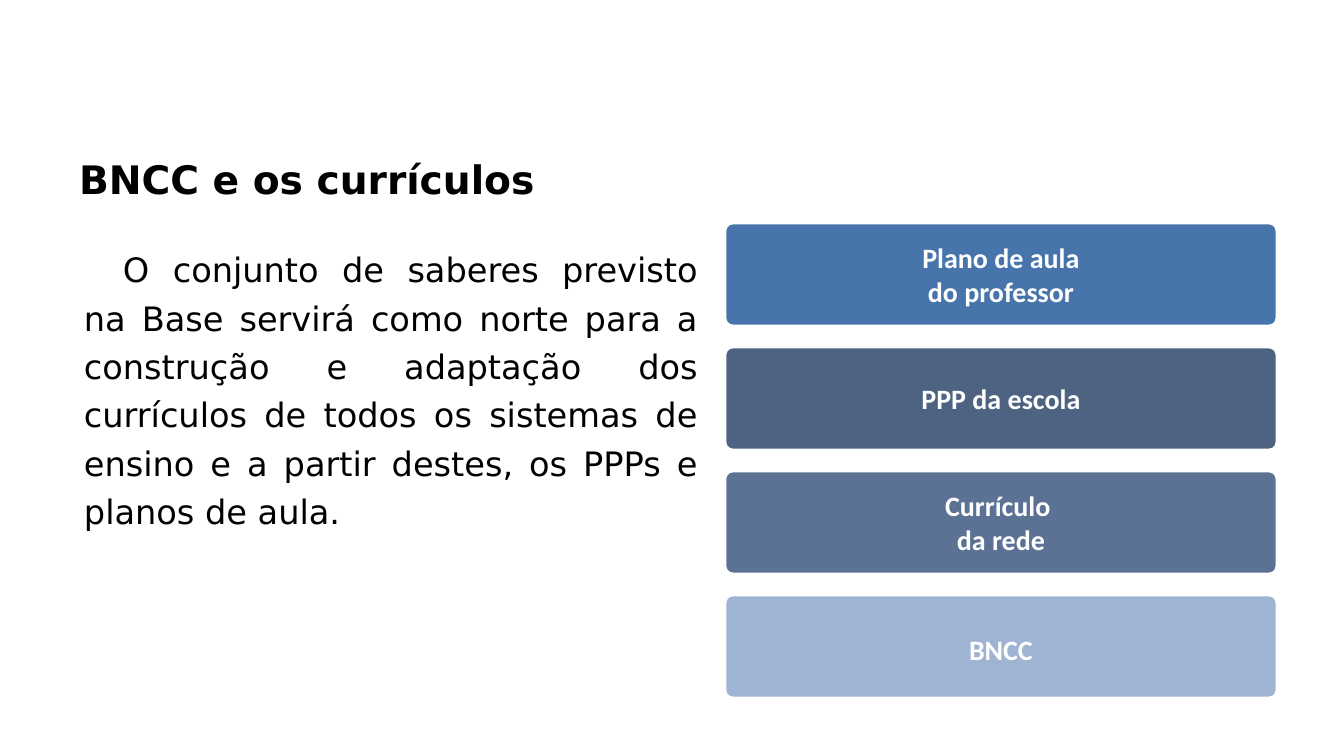
from dataclasses import dataclass

from pptx import Presentation
from pptx.dml.color import RGBColor
from pptx.enum.shapes import MSO_SHAPE
from pptx.enum.text import MSO_ANCHOR, MSO_AUTO_SIZE, PP_ALIGN
from pptx.util import Pt

ROUNDED = MSO_SHAPE.ROUNDED_RECTANGLE
TOP, MIDDLE = MSO_ANCHOR.TOP, MSO_ANCHOR.MIDDLE
LEFT, CENTER, JUSTIFY = PP_ALIGN.LEFT, PP_ALIGN.CENTER, PP_ALIGN.JUSTIFY
TITLE_ONLY = 5

# Content
TITLE = "BNCC e os currículos"
BODY = (
    "O conjunto de saberes previsto na Base servirá como norte para a "
    "construção e adaptação dos currículos de todos os sistemas de ensino "
    "e a partir destes, os PPPs e planos de aula."
)
# Level text (\v is a line break), fill, extra top inset in px
LEVELS = [
    ("Plano de aula\vdo professor", "4775AB", 0),
    ("PPP da escola", "4D6381", 0),
    ("Currículo \vda rede", "5B7294", 0),
    ("BNCC", "9FB3D3", 6),
]


@dataclass(frozen=True)
class Theme:
    text: str = "000000"
    light: str = "FFFFFF"
    text_font: str = "DejaVu Sans"
    level_font: str = "Calibri"
    title_size: int = 28
    body_size: int = 24
    level_size: int = 20


THEME = Theme()

# Layout in px
SLIDE_SIZE = (1344, 756)
TITLE_BOX = (79, 155, 1173, 47)
BODY_BOX = (79, 236, 624, 302)
BODY_INDENT = 39
LEVEL_BOX = (725, 223, 552, 103)
LEVEL_PITCH = 124
INSET = 5


def px(value):
    return round(value * 914400 / 100.8)


def set_frame(frame, inset, anchor, extra_top=0):
    frame.word_wrap = True
    frame.auto_size = MSO_AUTO_SIZE.NONE
    frame.vertical_anchor = anchor
    frame.margin_left = frame.margin_right = frame.margin_bottom = px(inset)
    frame.margin_top = px(inset + extra_top)


def set_text(frame, text, font_name, size, color, alignment, bold):
    frame.text = text
    paragraph = frame.paragraphs[0]
    paragraph.alignment = alignment
    font = paragraph.font
    font.name, font.size, font.bold = font_name, Pt(size), bold
    font.color.rgb = RGBColor.from_string(color)
    return paragraph


presentation = Presentation()
presentation.slide_width, presentation.slide_height = map(px, SLIDE_SIZE)
slide = presentation.slides.add_slide(presentation.slide_layouts[TITLE_ONLY])

# Title
title = slide.shapes.title
title.left, title.top, title.width, title.height = map(px, TITLE_BOX)
set_frame(title.text_frame, 0, TOP)
set_text(title.text_frame, TITLE, THEME.text_font, THEME.title_size,
         THEME.text, LEFT, True)

# Body text
body = slide.shapes.add_textbox(*map(px, BODY_BOX))
set_frame(body.text_frame, INSET, TOP)
paragraph = set_text(body.text_frame, BODY, THEME.text_font, THEME.body_size,
                     THEME.text, JUSTIFY, False)
paragraph.line_spacing = 1.2
properties = paragraph._p.get_or_add_pPr()
properties.set("marL", "0")
properties.set("indent", str(px(BODY_INDENT)))

# Stack of levels
left, top, width, height = LEVEL_BOX
for row, (text, fill, extra_top) in enumerate(LEVELS):
    box = (left, top + row * LEVEL_PITCH, width, height)
    level = slide.shapes.add_shape(ROUNDED, *map(px, box))
    level.adjustments[0] = 0.075
    level.shadow.inherit = False
    level.fill.solid()
    level.fill.fore_color.rgb = RGBColor.from_string(fill)
    level.line.color.rgb = RGBColor.from_string(THEME.light)
    level.line.width = Pt(2)
    set_frame(level.text_frame, INSET, MIDDLE, extra_top)
    set_text(level.text_frame, text, THEME.level_font, THEME.level_size,
             THEME.light, CENTER, True)

presentation.save("out.pptx")
